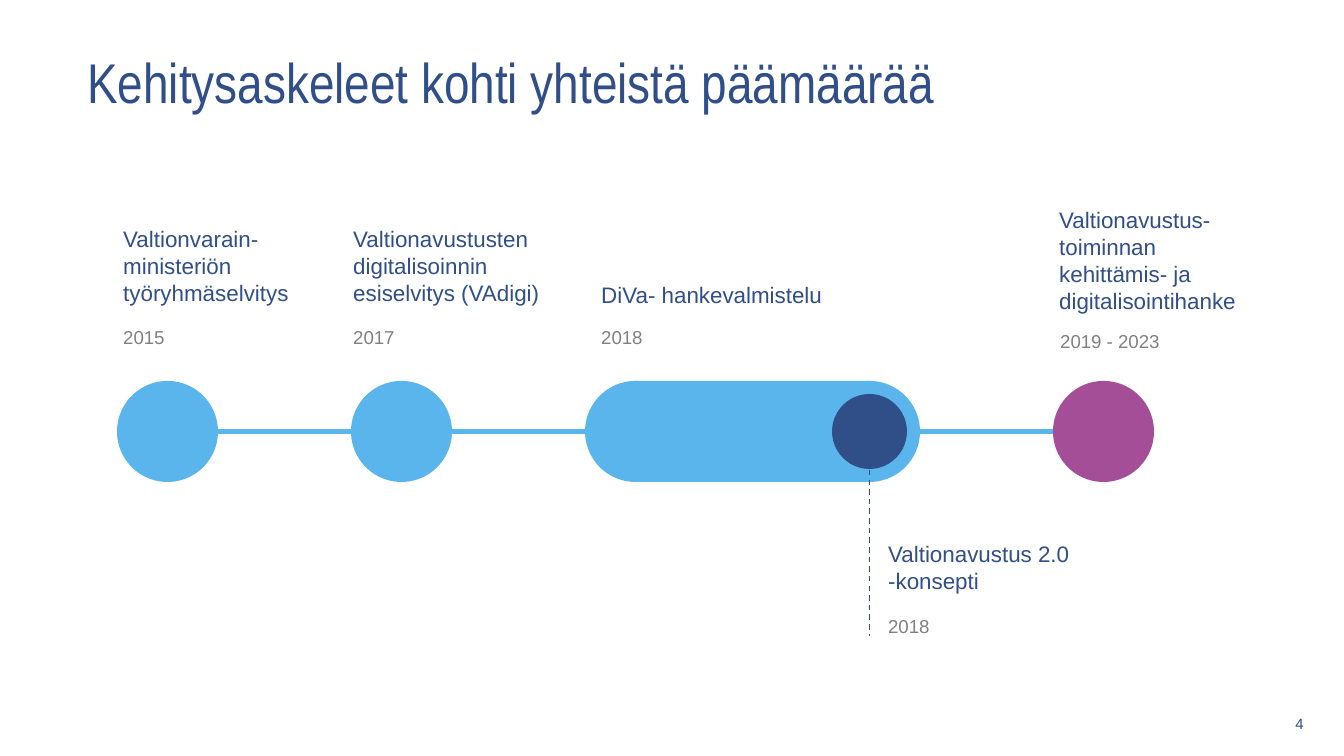
from lxml.etree import SubElement
from pptx import Presentation
from pptx.dml.color import RGBColor
from pptx.enum.dml import MSO_LINE
from pptx.enum.shapes import MSO_CONNECTOR, MSO_SHAPE
from pptx.enum.text import MSO_ANCHOR, PP_ALIGN
from pptx.oxml.ns import qn
from pptx.util import Emu, Pt

INK = {"navy": "304E88", "sky": "5AB5EC", "plum": "A34E96", "grey": "808080"}

TITLE = "Kehitysaskeleet kohti yhteistä päämäärää"
PAGE = "4"
STEPS = [
    ("Valtionvarain-ministeriön työryhmäselvitys", (110, 219, 241, 95),
     "2015", (110, 319, 214, 36)),
    ("Valtionavustusten digitalisoinnin esiselvitys (VAdigi)", (340, 219, 214, 95),
     "2017", (340, 319, 214, 36)),
    ("DiVa- hankevalmistelu", (588, 275, 298, 40),
     "2018", (588, 319, 298, 36)),
    ("Valtionavustus 2.0\n-konsepti", (875, 534, 298, 67),
     "2018", (875, 608, 298, 36)),
    ("Valtionavustus-\vtoiminnan\nkehittämis- ja digitalisointihanke", (1046, 200, 298, 122),
     "2019 - 2023", (1047, 323, 185, 36)),
]
NODES = ["sky", "sky", "sky", "sky", "plum"]
LEFT, TOP, SIZE, GAP = 117, 381, 101, 234
DOT = 75

UNIT = 914400 / 134.4


def px(n):
    return Emu(round(n * UNIT))


def tint(name):
    return RGBColor.from_string(INK[name])


deck = Presentation()
deck.slide_width, deck.slide_height = px(1344), px(756)
slide = deck.slides.add_slide(deck.slide_layouts[6])


def write(text, box, size, ink, face="Arial", anchor=MSO_ANCHOR.TOP, align=PP_ALIGN.LEFT):
    frame = slide.shapes.add_textbox(*map(px, box)).text_frame
    frame.word_wrap = True
    frame.vertical_anchor = anchor
    frame.text = text
    for para in frame.paragraphs:
        para.alignment = align
        for run in para.runs:
            run.font.name = face
            run.font.size = Pt(size)
            run.font.color.rgb = tint(ink)


def draw(kind, box, ink):
    shape = slide.shapes.add_shape(kind, *map(px, box))
    shape.shadow.inherit = False
    shape.fill.solid()
    shape.fill.fore_color.rgb = tint(ink)
    shape.line.fill.background()


def rule(ends, ink, width):
    line = slide.shapes.add_connector(MSO_CONNECTOR.STRAIGHT, *map(px, ends))
    line.line.color.rgb = tint(ink)
    line.line.width = Pt(width)
    SubElement(line._element.spPr, qn("a:effectLst"))
    return line


mid = TOP + SIZE / 2
rule((133, mid, 1140, mid), "sky", 2.25)
for i, ink in enumerate(NODES):
    draw(MSO_SHAPE.OVAL, (LEFT + i * GAP, TOP, SIZE, SIZE), ink)

start = LEFT + 2 * GAP + SIZE / 2
draw(MSO_SHAPE.RECTANGLE, (start, TOP, GAP, SIZE), "sky")
hub = start + GAP
draw(MSO_SHAPE.OVAL, (hub - DOT / 2, mid - DOT / 2, DOT, DOT), "navy")
rule((hub, mid, hub, 636), "navy", 0.75).line.dash_style = MSO_LINE.DASH

write(TITLE, (74, 16, 1085, 130), 30, "navy", "Arial Narrow", MSO_ANCHOR.MIDDLE)
for name, head, year, foot in STEPS:
    write(name, head, 12, "navy")
    write(year, foot, 10, "grey")
write(PAGE, (1247, 708, 70, 32), 8, "navy", anchor=MSO_ANCHOR.MIDDLE, align=PP_ALIGN.RIGHT)

deck.save("out.pptx")
